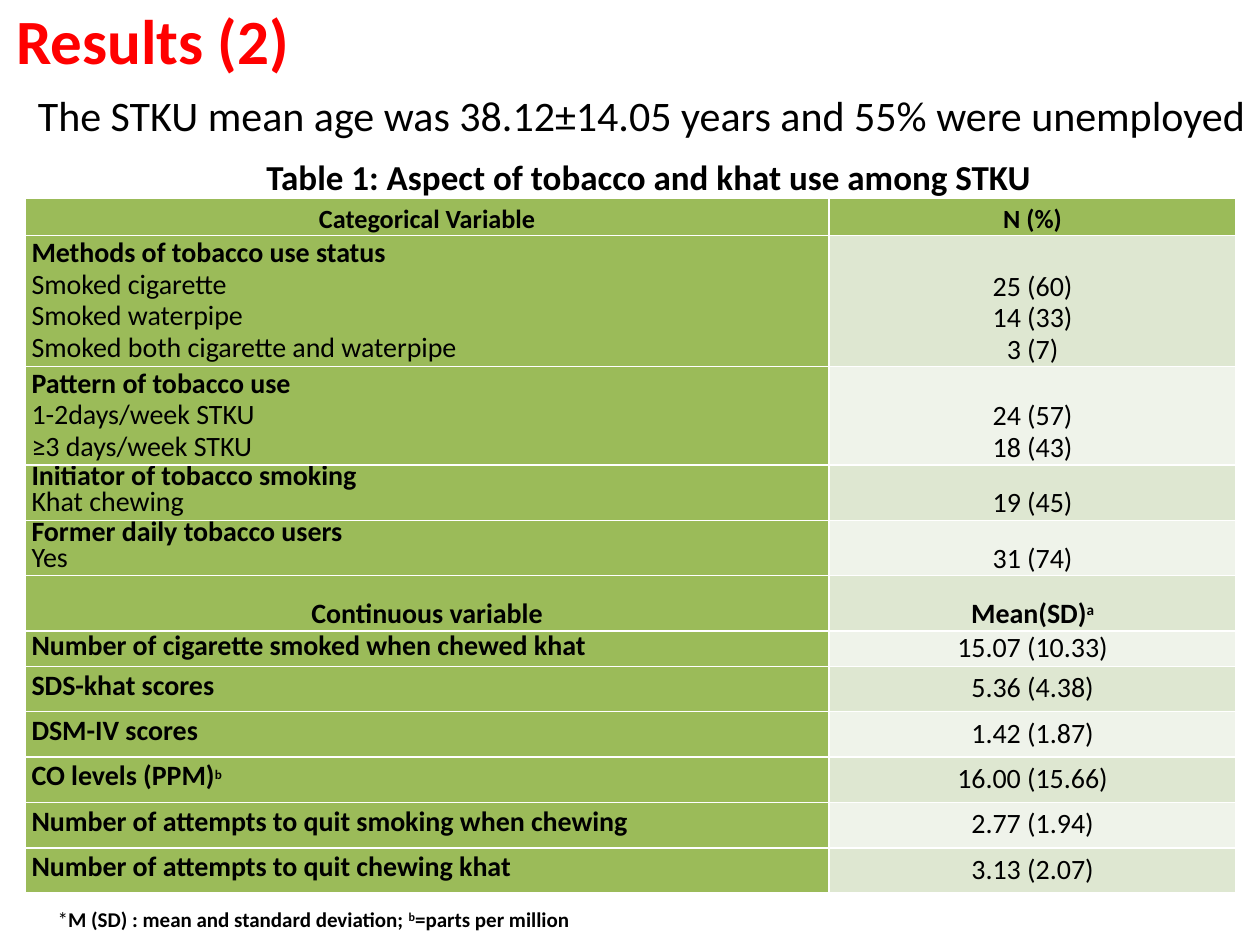
from dataclasses import dataclass

from lxml.etree import SubElement
from pptx import Presentation
from pptx.dml.color import RGBColor
from pptx.enum.text import MSO_ANCHOR as Anchor, MSO_AUTO_SIZE as AutoSize, PP_ALIGN as Align
from pptx.oxml.ns import qn
from pptx.util import Inches, Pt


@dataclass(frozen=True)
class Theme:
    font: str = "Calibri"
    text: str = "000000"
    title: str = "FF0000"
    green: str = "9BBB59"
    bands: tuple = ("DEE7D1", "EFF3EA")
    title_size: int = 36
    lead_size: int = 24
    caption_size: int = 20
    cell_size: int = 16
    header_size: int = 15
    mark_size: int = 13
    note_size: int = 12


THEME = Theme()
COLUMN_WIDTHS = (6.38, 3.23)
HEADER_HEIGHT = 0.3

# Height, label line spacing, heading, mark after it, items, values
CATEGORICAL = [
    (1.04, 18, "Methods of tobacco use status", "",
     ["Smoked cigarette", "Smoked waterpipe", "Smoked both cigarette and waterpipe"],
     ["25 (60)", "14 (33)", "3 (7)"]),
    (0.78, 18, "Pattern of tobacco use", "",
     ["1-2days/week STKU", "≥3 days/week STKU"], ["24 (57)", "18 (43)"]),
    (0.44, 15, "Initiator of tobacco smoking", "", ["Khat chewing"], ["19 (45)"]),
    (0.44, 15, "Former daily tobacco users", "", ["Yes"], ["31 (74)"]),
]
CONTINUOUS = [
    (0.28, 15, "Number of cigarette smoked when chewed khat", "", [], ["15.07 (10.33)"]),
    (0.36, 15, "SDS-khat scores", "", [], ["5.36 (4.38)"]),
    (0.36, 15, "DSM-IV scores", "", [], ["1.42 (1.87)"]),
    (0.36, 15, "CO levels (PPM)", "b", [], ["16.00 (15.66)"]),
    (0.36, 15, "Number of attempts to quit smoking when chewing", "", [], ["2.77 (1.94)"]),
    (0.36, 15, "Number of attempts to quit chewing khat", "", [], ["3.13 (2.07)"]),
]
SUBHEADER_HEIGHT = 0.44


def place(shape, left, top, width, height):
    shape.left, shape.top = Inches(left), Inches(top)
    shape.width, shape.height = Inches(width), Inches(height)


def add_span(para, text, size, bold=False, color=THEME.text, raised=False):
    span = para.add_run()
    span.text = text
    font = span.font
    font.name, font.size, font.bold = THEME.font, Pt(size), bold
    font.color.rgb = RGBColor.from_string(color)
    if raised:
        span._r.get_or_add_rPr().set("baseline", "30000")


def add_para(frame, align, spacing=None):
    """Use the empty first paragraph, or append one."""
    first = frame.paragraphs[0]
    para = frame.add_paragraph() if first.runs else first
    para.alignment = align
    para.line_spacing = spacing
    return para


def remove_bullet(para):
    properties = para._p.get_or_add_pPr()
    properties.set("marL", "0")
    properties.set("indent", "0")
    SubElement(properties, qn("a:buNone"))


def format_cell(cell, fill, anchor):
    cell.fill.solid()
    cell.fill.fore_color.rgb = RGBColor.from_string(fill)
    cell.vertical_anchor = anchor
    cell.margin_left = cell.margin_right = Inches(0.05)
    cell.margin_top, cell.margin_bottom = Inches(0.01), 0
    return cell.text_frame


def add_title(page):
    title = page.shapes.title
    place(title, 0.03, 0, 9, 0.63)
    frame = title.text_frame
    frame.vertical_anchor = Anchor.MIDDLE
    frame.auto_size = AutoSize.NONE
    add_span(add_para(frame, Align.LEFT), "Results (2)", THEME.title_size, True, THEME.title)


def add_body(page):
    body = page.placeholders[1]
    place(body, 0.2, 0.66, 9.9, 6.98)
    frame = body.text_frame
    frame.auto_size = AutoSize.NONE
    lead = add_para(frame, Align.JUSTIFY)
    add_span(lead, "The STKU mean age was 38.12±14.05 years and 55% were unemployed",
             THEME.lead_size)
    caption = add_para(frame, Align.CENTER, 1.2)
    add_span(caption, "Table 1: Aspect of tobacco and khat use among STKU",
             THEME.caption_size, True)
    for para in (lead, caption):
        remove_bullet(para)


def fill_header(row):
    for cell, text in zip(row.cells, ("Categorical Variable", "N (%)")):
        frame = format_cell(cell, THEME.green, Anchor.TOP)
        add_span(add_para(frame, Align.CENTER, 1.15), text, THEME.header_size, True)


def fill_subheader(row, band):
    label, value = row.cells
    frame = format_cell(label, THEME.green, Anchor.BOTTOM)
    add_span(add_para(frame, Align.CENTER, Pt(15)), "Continuous variable", THEME.cell_size, True)
    para = add_para(format_cell(value, band, Anchor.BOTTOM), Align.CENTER, Pt(18))
    add_span(para, "Mean(SD)", THEME.cell_size, True)
    add_span(para, "a", THEME.header_size, True, raised=True)


def fill_row(row, band, spacing, heading, mark, items, values):
    label, value = row.cells
    frame = format_cell(label, THEME.green, Anchor.MIDDLE)
    para = add_para(frame, Align.JUSTIFY, Pt(spacing))
    add_span(para, heading, THEME.cell_size, True)
    if mark:
        add_span(para, mark, THEME.mark_size, True, raised=True)
    for item in items:
        add_span(add_para(frame, Align.JUSTIFY, Pt(spacing)), item, THEME.cell_size)
    # Values line up with the items below the heading
    frame = format_cell(value, band, Anchor.BOTTOM if items else Anchor.MIDDLE)
    for text in values:
        add_span(add_para(frame, Align.CENTER, Pt(18)), text, THEME.cell_size)


def add_results_table(page):
    records = CATEGORICAL + [None] + CONTINUOUS
    heights = [HEADER_HEIGHT] + [r[0] if r else SUBHEADER_HEIGHT for r in records]
    table = page.shapes.add_table(
        len(heights), len(COLUMN_WIDTHS), Inches(0.2), Inches(1.57),
        Inches(sum(COLUMN_WIDTHS)), Inches(sum(heights))).table
    for column, width in zip(table.columns, COLUMN_WIDTHS):
        column.width = Inches(width)
    for row, height in zip(table.rows, heights):
        row.height = Inches(height)
    fill_header(table.rows[0])
    for index, record in enumerate(records):
        row, band = table.rows[index + 1], THEME.bands[index % 2]
        if record:
            fill_row(row, band, *record[1:])
        else:
            fill_subheader(row, band)


def add_note(page):
    box = page.shapes.add_textbox(Inches(0.36), Inches(7.14), Inches(9), Inches(0.31))
    frame = box.text_frame
    frame.word_wrap = True
    frame.vertical_anchor = Anchor.MIDDLE
    para = add_para(frame, Align.LEFT)
    add_span(para, "*", THEME.note_size)
    add_span(para, "M (SD) : mean and standard deviation; ", THEME.note_size, True)
    add_span(para, "b", THEME.note_size, True, raised=True)
    add_span(para, "=parts per million", THEME.note_size, True)


def main():
    deck = Presentation()
    deck.slide_width, deck.slide_height = Inches(10), Inches(7.5)
    page = deck.slides.add_slide(deck.slide_layouts[1])
    add_title(page)
    add_body(page)
    add_note(page)
    add_results_table(page)
    deck.save("out.pptx")


if __name__ == "__main__":
    main()
